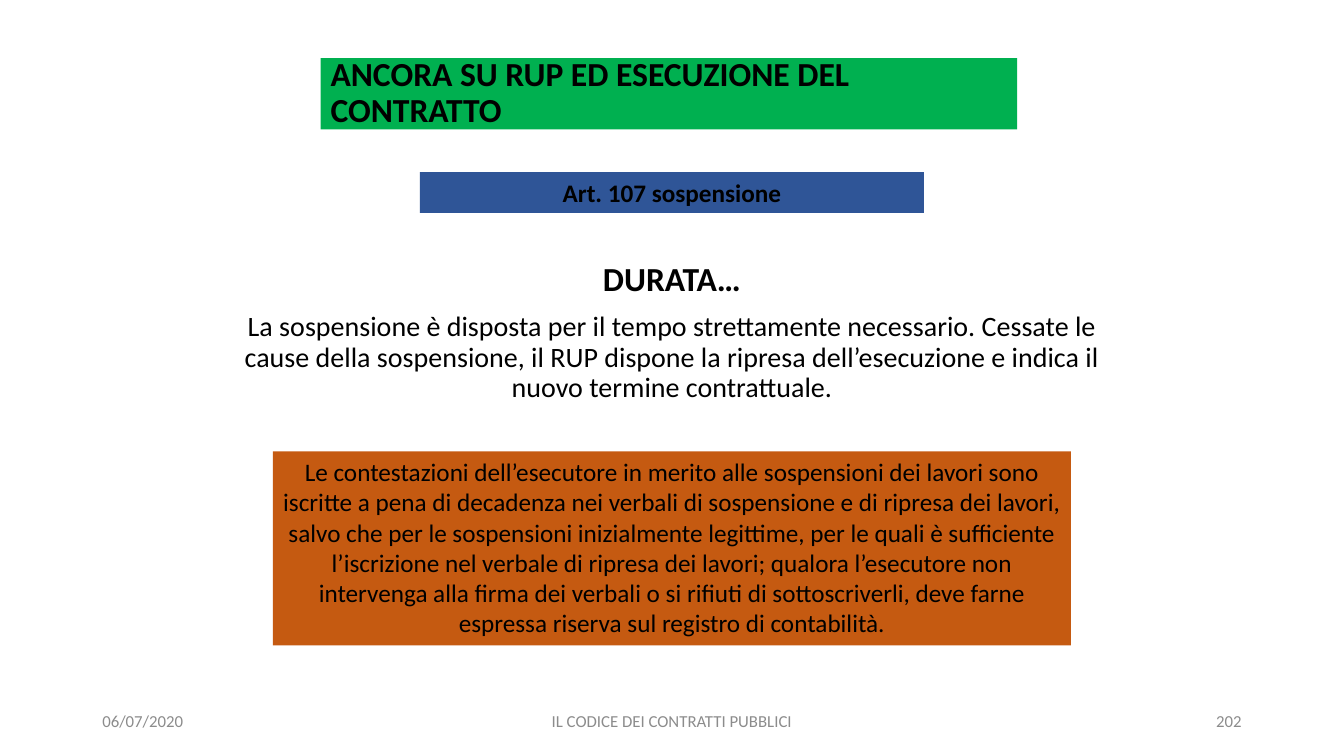
from pptx import Presentation
from pptx.dml.color import RGBColor
from pptx.enum.shapes import MSO_SHAPE as Shape
from pptx.enum.text import MSO_ANCHOR as Anchor, PP_ALIGN as Align
from pptx.util import Pt

BLACK = RGBColor(0x00, 0x00, 0x00)
GREY = RGBColor(0x8C, 0x8C, 0x8C)
GREEN = RGBColor(0x00, 0xB0, 0x50)
BLUE = RGBColor(0x2F, 0x55, 0x97)
ORANGE = RGBColor(0xC5, 0x5A, 0x11)


class Deck:
    font = "Calibri"

    def __init__(self, width, height):
        self.prs = Presentation()
        self.prs.slide_width, self.prs.slide_height = Pt(width), Pt(height)
        self.slide = self.prs.slides.add_slide(self.prs.slide_layouts[6])

    def para(self, frame, text, size, color=BLACK, bold=False,
             align=Align.CENTER, ls=None, before=0):
        """Add one paragraph, using the empty first one if it is free."""
        par = frame.paragraphs[0]
        if par.runs:
            par = frame.add_paragraph()
        par.alignment = align
        par.line_spacing = ls
        par.space_before = Pt(before)
        run = par.add_run()
        run.text = text
        run.font.name = self.font
        run.font.size = Pt(size)
        run.font.bold = bold
        run.font.color.rgb = color

    def label(self, box, anchor=Anchor.TOP):
        frame = self.slide.shapes.add_textbox(*map(Pt, box)).text_frame
        frame.word_wrap = True
        frame.vertical_anchor = anchor
        return frame

    def block(self, box, fill, anchor=Anchor.TOP):
        rect = self.slide.shapes.add_shape(Shape.RECTANGLE, *map(Pt, box))
        rect.shadow.inherit = False
        rect.fill.solid()
        rect.fill.fore_color.rgb = fill
        rect.line.fill.background()
        frame = rect.text_frame
        frame.word_wrap = True
        frame.vertical_anchor = anchor
        return frame


def main():
    deck = Deck(960, 540)

    # Title and article
    title = deck.block((229, 41.5, 497.5, 51), GREEN, Anchor.MIDDLE)
    deck.para(title, "ANCORA SU RUP ED ESECUZIONE DEL CONTRATTO", 24,
              bold=True, align=Align.LEFT, ls=0.9)
    article = deck.block((300, 123, 360, 29), BLUE)
    deck.para(article, "Art. 107 sospensione", 18, bold=True)

    # Duration
    body = deck.label((156, 147.5, 648, 150.5))
    body.margin_top = Pt(40)
    deck.para(body, "DURATA…", 24, bold=True, ls=0.9)
    deck.para(body, "La sospensione è disposta per il tempo strettamente "
              "necessario. Cessate le cause della sospensione, il RUP "
              "dispone la ripresa dell’esecuzione e indica il nuovo termine "
              "contrattuale.", 20, ls=0.9, before=10)

    # Disputes
    note = deck.block((195, 322.5, 570, 138.5), ORANGE)
    deck.para(note, "Le contestazioni dell’esecutore in merito alle "
              "sospensioni dei lavori sono iscritte a pena di decadenza nei "
              "verbali di sospensione e di ripresa dei lavori, salvo che per "
              "le sospensioni inizialmente legittime, per le quali è "
              "sufficiente l’iscrizione nel verbale di ripresa dei lavori; "
              "qualora l’esecutore non intervenga alla firma dei verbali o "
              "si rifiuti di sottoscriverli, deve farne espressa riserva sul "
              "registro di contabilità.", 18)

    # Footer
    for left, width, text, align in (
            (66, 216, "06/07/2020", Align.LEFT),
            (318, 324, "IL CODICE DEI CONTRATTI PUBBLICI", Align.CENTER),
            (678, 216, "202", Align.RIGHT)):
        foot = deck.label((left, 500.5, width, 28.75), Anchor.MIDDLE)
        deck.para(foot, text, 12, GREY, align=align)

    deck.prs.save("out.pptx")


if __name__ == "__main__":
    main()
